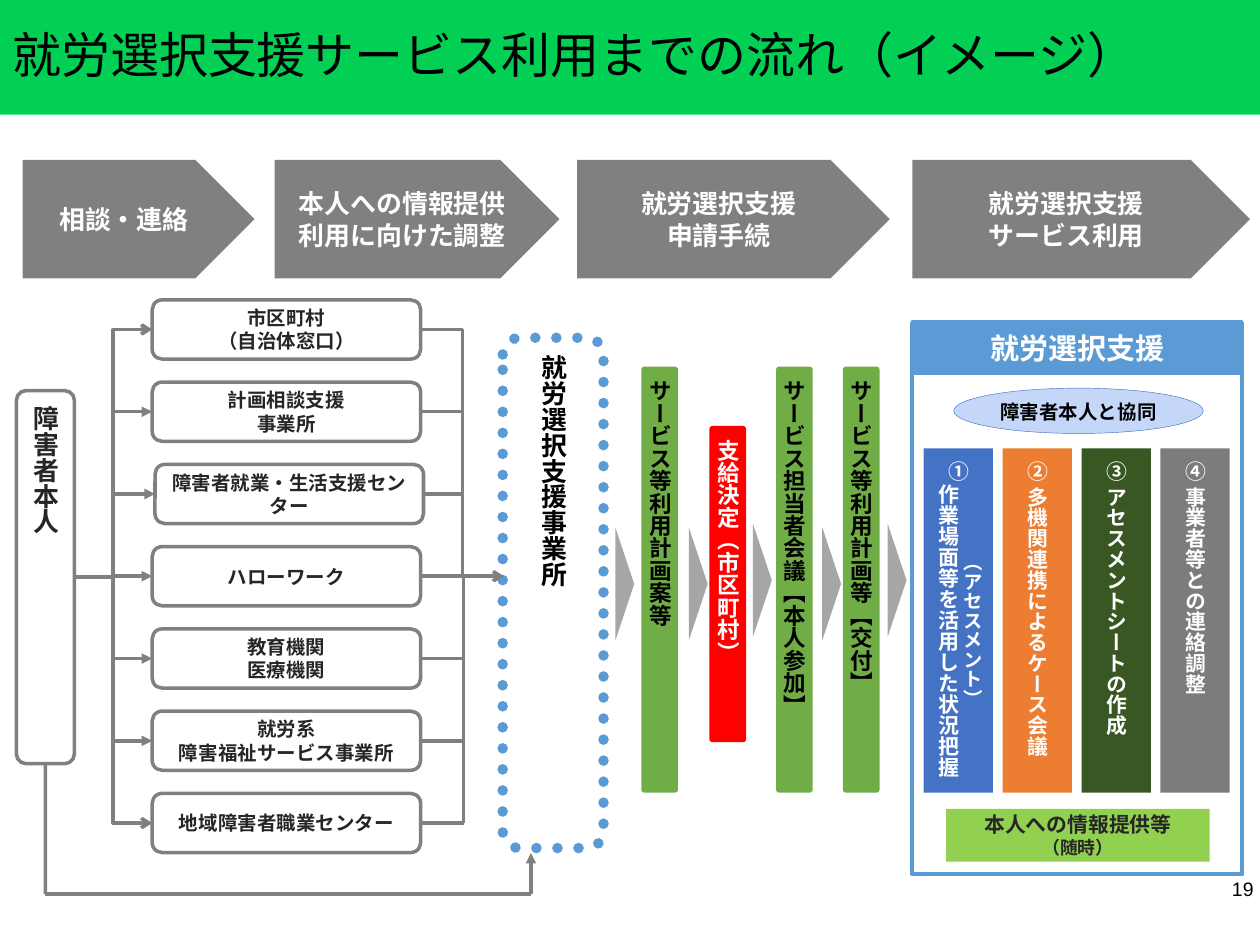
"""Build the employment selection support flow slide."""
from dataclasses import dataclass
from typing import Any, Optional

from lxml.etree import SubElement
from pptx import Presentation
from pptx.dml.color import RGBColor
from pptx.enum.dml import MSO_LINE
from pptx.enum.shapes import MSO_CONNECTOR as CONN, MSO_SHAPE as SHAPE
from pptx.enum.text import MSO_ANCHOR as ANCHOR, PP_ALIGN as ALIGN
from pptx.oxml.ns import qn
from pptx.util import Pt

GOTHIC = "Noto Sans CJK JP"
GRAY, BLUE, INK, BLACK, WHITE = "808080", "5B9BD5", "262626", "000000", "FFFFFF"
TIGHT = (2.2, 3.6, 2.2, 3.6)


@dataclass
class Box:
    """A shape or text box; kind None means a plain text box."""
    kind: Any
    x: float
    y: float
    w: float
    h: float
    text: str = ""
    sizes: tuple = (11.1,)
    color: str = BLACK
    fill: Optional[str] = None
    line: Optional[str] = None
    weight: float = 2
    adj: Optional[float] = None
    inset: tuple = (7.2, 3.6, 7.2, 3.6)
    align: Any = ALIGN.CENTER
    anchor: Any = ANCHOR.MIDDLE
    vertical: bool = False
    wrap: bool = True
    font: str = GOTHIC
    bold: bool = True
    spacing: float = 1.0
    rotation: float = 0


@dataclass
class Link:
    """A connector, optionally joined to (shape, site) at either end."""
    x1: float
    y1: float
    x2: float
    y2: float
    head: Optional[str] = None
    kind: Any = CONN.STRAIGHT
    start: Any = None
    end: Any = None


def paint(target: Any, color: str) -> None:
    """Apply a hex colour to a fill or a font colour."""
    if hasattr(target, "solid"):
        target.solid()
        target = target.fore_color
    target.rgb = RGBColor.from_string(color)


def assign(obj: Any, values: dict) -> None:
    """Set every attribute listed in values."""
    for name, value in values.items():
        setattr(obj, name, value)


def write(sp: Any, b: Box) -> None:
    """Fill the text frame of a shape."""
    tf = sp.text_frame
    left, top, right, bottom = map(Pt, b.inset)
    assign(tf, dict(word_wrap=b.wrap, vertical_anchor=b.anchor, margin_left=left,
                    margin_top=top, margin_right=right, margin_bottom=bottom))
    if b.vertical:
        sp.element.txBody.bodyPr.set("vert", "eaVert")
    for i, text in enumerate(b.text.split("\n")):
        p = tf.add_paragraph() if i else tf.paragraphs[0]
        assign(p, dict(alignment=b.align, line_spacing=b.spacing))
        r = p.add_run()
        r.text = text
        size = b.sizes[min(i, len(b.sizes) - 1)]
        assign(r.font, dict(name=b.font, size=Pt(size), bold=b.bold))
        paint(r.font.color, b.color)
        SubElement(r._r.get_or_add_rPr(), qn("a:ea"), typeface=GOTHIC)


def draw_box(s: Any, b: Box) -> Any:
    """Draw one box and return its shape."""
    frame = [Pt(v) for v in (b.x, b.y, b.w, b.h)]
    if b.kind is None:
        sp = s.shapes.add_textbox(*frame)
    else:
        sp = s.shapes.add_shape(b.kind, *frame)
        sp.shadow.inherit = False
        sp.rotation = b.rotation
        if b.adj is not None:
            sp.adjustments[0] = b.adj
        for part, color in ((sp.fill, b.fill), (sp.line.fill, b.line)):
            if color:
                paint(part, color)
            else:
                part.background()
        if b.line:
            sp.line.width = Pt(b.weight)
    if b.text:
        write(sp, b)
    return sp


def draw_link(s: Any, k: Link) -> None:
    """Draw one grey connector."""
    cn = s.shapes.add_connector(k.kind, *map(Pt, (k.x1, k.y1, k.x2, k.y2)))
    paint(cn.line.fill, GRAY)
    cn.line.width = Pt(2)
    if k.start:
        cn.begin_connect(*k.start)
    if k.end:
        cn.end_connect(*k.end)
    if k.head:
        SubElement(cn.line._get_or_add_ln(), qn("a:tailEnd"), type=k.head)
    SubElement(cn.element.spPr, qn("a:effectLst"))


def draw_stages(s: Any) -> None:
    """Draw the header and the four stage arrows."""
    draw_box(s, Box(SHAPE.RECTANGLE, 0, 0, 720, 65.5, fill="02D055"))
    draw_box(s, Box(None, 0, 0, 720, 65.5, "就労選択支援サービス利用までの流れ（イメージ）", (28,),
                    align=ALIGN.LEFT, font="Calibri", bold=False, spacing=0.9))
    for x, w, text in ((13, 132.5, "相談・連絡"), (157, 162.7, "本人への情報提供\n利用に向けた調整"),
                       (329.8, 178.6, "就労選択支援\n申請手続"),
                       (521.3, 193, "就労選択支援\nサービス利用")):
        draw_box(s, Box(SHAPE.PENTAGON, x, 91.4, w, 67.7, text, (14.8,), WHITE, GRAY))


def draw_consultation(s: Any) -> None:
    """Draw the person, the consultation desks and the support office."""
    desk_style = dict(color=INK, fill=WHITE, line=GRAY, inset=TIGHT)
    rounded = SHAPE.ROUNDED_RECTANGLE
    person = draw_box(s, Box(rounded, 9.4, 223.2, 33.1, 213.2, "障害者本人", (14.8,),
                             vertical=True, **desk_style))
    office = draw_box(s, Box(rounded, 287.3, 193, 57.6, 291.6, "就労選択支援事業所", (14.8,),
                             line=BLUE, weight=6, inset=TIGHT, vertical=True))
    office.line.dash_style = MSO_LINE.ROUND_DOT
    office.line._get_or_add_ln().set("cap", "rnd")
    desks = ("市区町村\n（自治体窓口）", "計画相談支援\n事業所", "障害者就業・生活支援センター", "ハローワーク",
             "教育機関\n医療機関", "就労系\n障害福祉サービス事業所", "地域障害者職業センター")
    top, pitch, height, left_bus, right_bus, hub = 171.4, 47, 33.8, 65, 265, 329.3
    last = len(desks) - 1
    for i, text in enumerate(desks):
        y = top + i * pitch
        mid = y + height / 2
        x = 88.6 if i == 2 else 87
        desk = draw_box(s, Box(rounded, x, y, 153.4, height, text, **desk_style))
        if i in (0, last):
            draw_link(s, Link(42.5, hub, x, mid, "arrow", CONN.ELBOW, (person, 3), (desk, 1)))
        else:
            draw_link(s, Link(left_bus, mid, x, mid, "triangle", end=(desk, 1)))
        if i:
            draw_link(s, Link(x + 153.4, mid, right_bus, mid, start=(desk, 3)))
        else:
            draw_link(s, Link(x + 153.4, mid, 288, hub, "arrow", CONN.ELBOW, (desk, 3)))
    draw_link(s, Link(right_bus, hub, right_bus, top + last * pitch + height / 2))
    draw_link(s, Link(26, 436.4, 26, 510.8, start=(person, 2)))
    draw_link(s, Link(303.4, 510.8, 26, 510.8))
    draw_link(s, Link(303.4, 510.8, 303.4, 487.4, "triangle"))


def draw_application(s: Any) -> None:
    """Draw the application steps and the wedges between them."""
    green, tall, short = "70AD47", (209.5, 243.4), (243.4, 180.7)
    for x, (y, h), text, color, fill in (
            (366.5, tall, "サービス等利用計画案等", BLACK, green),
            (405.4, short, "支給決定（市区町村）", WHITE, "FF0000"),
            (443.5, tall, "サービス担当者会議【本人参加】", BLACK, green),
            (481.7, tall, "サービス等利用計画等【交付】", BLACK, green)):
        draw_box(s, Box(SHAPE.ROUNDED_RECTANGLE, x, y, 20.9, h, text, (12.9,), color, fill,
                        adj=0.08, inset=TIGHT, vertical=True))
    for cx, cy in ((357, 333.7), (399, 333.7), (435.6, 331.6), (475.2, 333.7), (512.6, 331.6)):
        draw_box(s, Box(SHAPE.ISOSCELES_TRIANGLE, cx - 32.4, cy - 5.4, 64.8, 10.8,
                        fill="A6A6A6", rotation=90))


def draw_service(s: Any) -> None:
    """Draw the service panel with its four activities."""
    rect = SHAPE.RECTANGLE
    draw_box(s, Box(rect, 521.3, 183.6, 188.6, 30.2, "就労選択支援", (16.6,), WHITE, BLUE, BLUE, 1,
                    inset=(0, 0, 0, 0)))
    draw_box(s, Box(SHAPE.ROUNDED_RECTANGLE, 521.3, 185, 188.6, 314.6, line=BLUE, weight=2.5, adj=0))
    draw_box(s, Box(SHAPE.OVAL, 545, 221.8, 142.6, 25.9, "障害者本人と協同", fill="C4D7F9",
                    line="4472C4", weight=0.25, inset=(2.2, 5, 2.2, 3.6), wrap=False, font="Lato"))
    strips = (("①", "4472C4"), ("② 多機関連携によるケース会議", "ED7D31"),
              ("③ アセスメントシートの作成", "385723"), ("④ 事業者等との連絡調整", "7C7C7C"))
    for i, (text, fill) in enumerate(strips):
        draw_box(s, Box(rect, 527.8 + 45.1 * i, 256.3, 39.6, 196.6, text, (11.9,), WHITE, fill,
                        align=ALIGN.LEFT, vertical=True, wrap=False))
    draw_box(s, Box(None, 527.8, 269.3, 41.8, 183.6, "（アセスメント）\n作業場面等を活用した状況把握",
                    (11.1, 12), WHITE, vertical=True, wrap=False))
    draw_box(s, Box(rect, 540.7, 462.2, 150.5, 30.2, "本人への情報提供等\n（随時）", (11.9, 10.2), INK,
                    "92D050", wrap=False))
    draw_box(s, Box(None, 670.3, 501.1, 46.1, 20.2, "19", inset=(0, 0, 0, 0), align=ALIGN.RIGHT,
                    anchor=ANCHOR.TOP, font="Arial", bold=False))


def main() -> None:
    """Create and save the presentation."""
    prs = Presentation()
    assign(prs, dict(slide_width=Pt(720), slide_height=Pt(540)))
    s = prs.slides.add_slide(prs.slide_layouts[6])
    for draw in (draw_stages, draw_consultation, draw_application, draw_service):
        draw(s)
    prs.save("out.pptx")


if __name__ == "__main__":
    main()
